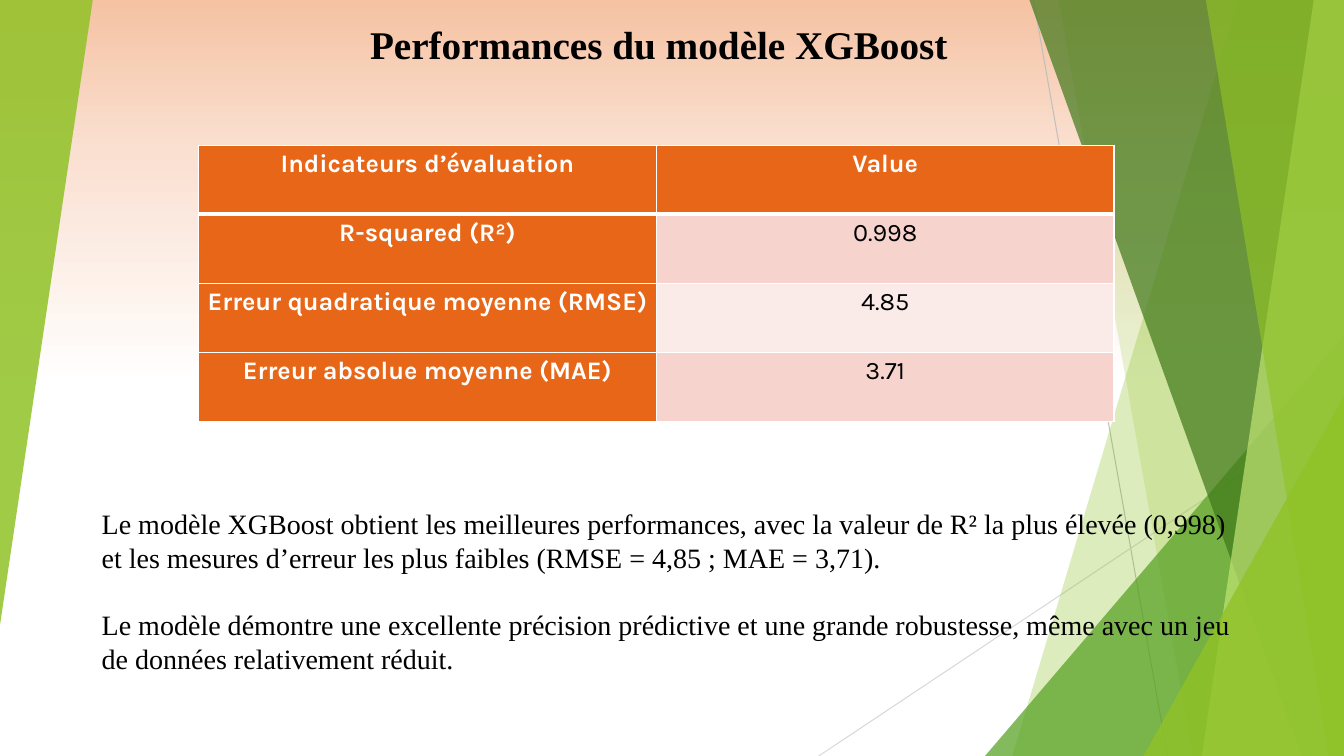
from lxml import etree
from pptx import Presentation
from pptx.dml.color import RGBColor
from pptx.enum.shapes import MSO_CONNECTOR, MSO_SHAPE
from pptx.enum.text import MSO_ANCHOR, PP_ALIGN
from pptx.oxml.ns import qn
from pptx.util import Inches, Pt

LEFT, CENTER = PP_ALIGN.LEFT, PP_ALIGN.CENTER
TOP = MSO_ANCHOR.TOP
STRAIGHT = MSO_CONNECTOR.STRAIGHT
TRIANGLE = MSO_SHAPE.ISOSCELES_TRIANGLE

WIDTH, HEIGHT = 13.33, 7.5
SERIF, SANS = "Times New Roman", "Karla"
COLORS = {
    "black": "000000", "white": "FFFFFF",
    "peach": "F5C2A3", "pale peach": "FAE0D1",
    "lime": "90C226", "green": "54A021", "forest": "3F7819", "light lime": "C0E474",
    "orange": "E76618", "pink": "F6D3CC", "pale pink": "FAEAE8",
    "gray": "BFBFBF", "light gray": "D9D9D9",
}

TITLE = "Performances du modèle XGBoost"
METRICS = [
    ("Indicateurs d’évaluation", "Value"),
    ("R-squared (R²)", "0.998"),
    ("Erreur quadratique moyenne (RMSE)", "4.85"),
    ("Erreur absolue moyenne (MAE)", "3.71"),
]
COMMENTS = [
    "Le modèle XGBoost obtient les meilleures performances, avec la valeur de R² la plus élevée "
    "(0,998) et les mesures d’erreur les plus faibles (RMSE = 4,85 ; MAE = 3,71).",
    "Le modèle démontre une excellente précision prédictive et une grande robustesse, même avec "
    "un jeu de données relativement réduit.",
]

BACKGROUND_STOPS = [(0, "peach"), (20, "pale peach"), (51, "white")]
RAYS = [
    ((10.25, 0), (11.58, HEIGHT), "gray"),
    ((WIDTH, 4.03), (8.12, HEIGHT), "light gray"),
]
# Bands reach the right edge: (top x, bottom x, color, opacity %)
# Triangles: (left, top, width, height, rotation, color, opacity %)
FACETS = [
    (12.28, 10.04, "lime", 30),
    (10.5, 11.83, "lime", 20),
    (9.77, 3.33, 3.56, 4.17, 0, "green", 72),
    (10.21, 12.91, "forest", 70),
    (13.03, 11.92, "light lime", 70),
    (11.96, 13.18, "lime", 65),
    (11.34, 3.93, 1.99, 3.57, 0, "lime", 80),
    (0, 0, 0.92, 6.2, 180, "lime", 85),
]


def rgb(name):
    return RGBColor.from_string(COLORS[name])


def inches(*lengths):
    return [Inches(length) for length in lengths]


def write(text_frame, paragraphs, font=SERIF, size=20, color="black", bold=False,
          align=LEFT, line_spacing=1.0, gap=0, after=0):
    text_frame.word_wrap = True
    text_frame.vertical_anchor = TOP
    for index, text in enumerate(paragraphs):
        paragraph = text_frame.add_paragraph() if index else text_frame.paragraphs[0]
        paragraph.alignment = align
        paragraph.line_spacing = line_spacing
        paragraph.space_before = Pt(gap if index else 0)
        paragraph.space_after = Pt(after)
        run = paragraph.add_run()
        run.text = text
        run.font.name = font
        run.font.size = Pt(size)
        run.font.bold = bold
        run.font.color.rgb = rgb(color)


def paint_background(slide):
    slide.background.fill.gradient()
    slide.background.fill.gradient_angle = 270
    stops = slide.element.find(".//" + qn("a:gsLst"))
    for stop in list(stops):
        stops.remove(stop)
    for position, color in BACKGROUND_STOPS:
        stop = etree.SubElement(stops, qn("a:gs"), pos=str(position * 1000))
        etree.SubElement(stop, qn("a:srgbClr"), val=COLORS[color])


def add_ray(slide, start, end, color):
    ray = slide.shapes.add_connector(STRAIGHT, *inches(*start, *end))
    ray.line.color.rgb = rgb(color)
    ray.line.width = Pt(0.75)
    etree.SubElement(ray.element.spPr, qn("a:effectLst"))


def add_facet(slide, *geometry, color, opacity):
    if len(geometry) == 2:
        top_x, bottom_x = geometry
        builder = slide.shapes.build_freeform(*inches(top_x, 0))
        corners = [(WIDTH, 0), (WIDTH, HEIGHT), (bottom_x, HEIGHT)]
        builder.add_line_segments([inches(*corner) for corner in corners], close=True)
        facet = builder.convert_to_shape()
    else:
        *box, rotation = geometry
        facet = slide.shapes.add_shape(TRIANGLE, *inches(*box))
        facet.adjustments[0] = 1
        facet.rotation = rotation
    facet.shadow.inherit = False
    facet.line.fill.background()
    facet.fill.solid()
    facet.fill.fore_color.rgb = rgb(color)
    color_element = facet.element.spPr.find(qn("a:solidFill"))[0]
    etree.SubElement(color_element, qn("a:alpha"), val=str(opacity * 1000))


def add_borders(cell, bottom_width):
    properties = cell._tc.get_or_add_tcPr()
    for side, width in (("L", 1), ("R", 1), ("T", 1), ("B", bottom_width)):
        line = etree.SubElement(properties, qn("a:ln" + side), w=str(Pt(width)))
        fill = etree.SubElement(line, qn("a:solidFill"))
        etree.SubElement(fill, qn("a:srgbClr"), val=COLORS["white"])


def add_metrics_table(slide):
    frame = slide.shapes.add_table(len(METRICS), 2, *inches(1.97, 1.44, 9.08, 2.74))
    table = frame.table
    table.horz_banding = False
    for row, texts in enumerate(METRICS):
        for column, text in enumerate(texts):
            cell = table.cell(row, column)
            is_heading = row == 0 or column == 0
            cell.margin_left = cell.margin_right = Inches(0.07)
            cell.margin_top = cell.margin_bottom = 0
            add_borders(cell, bottom_width=1 if row else 3)
            cell.fill.solid()
            band = "pink" if row % 2 else "pale pink"
            cell.fill.fore_color.rgb = rgb("orange" if is_heading else band)
            write(cell.text_frame, [text], font=SANS, size=18, bold=is_heading,
                  color="white" if is_heading else "black",
                  align=CENTER, line_spacing=1.15, after=8)


def main():
    presentation = Presentation()
    presentation.slide_width, presentation.slide_height = inches(WIDTH, HEIGHT)
    slide = presentation.slides.add_slide(presentation.slide_layouts[5])
    paint_background(slide)

    for ray in RAYS:
        add_ray(slide, *ray)
    for *geometry, color, opacity in FACETS:
        add_facet(slide, *geometry, color=color, opacity=opacity)

    title = slide.shapes.title
    title.left, title.top, title.width, title.height = inches(3.57, 0.15, 6.2, 0.57)
    write(title.text_frame, [TITLE], size=28, bold=True)

    add_metrics_table(slide)

    comments = slide.shapes.add_textbox(*inches(0.91, 4.98, 11.52, 1.78))
    write(comments.text_frame, COMMENTS, gap=24)

    presentation.save("out.pptx")


if __name__ == "__main__":
    main()
